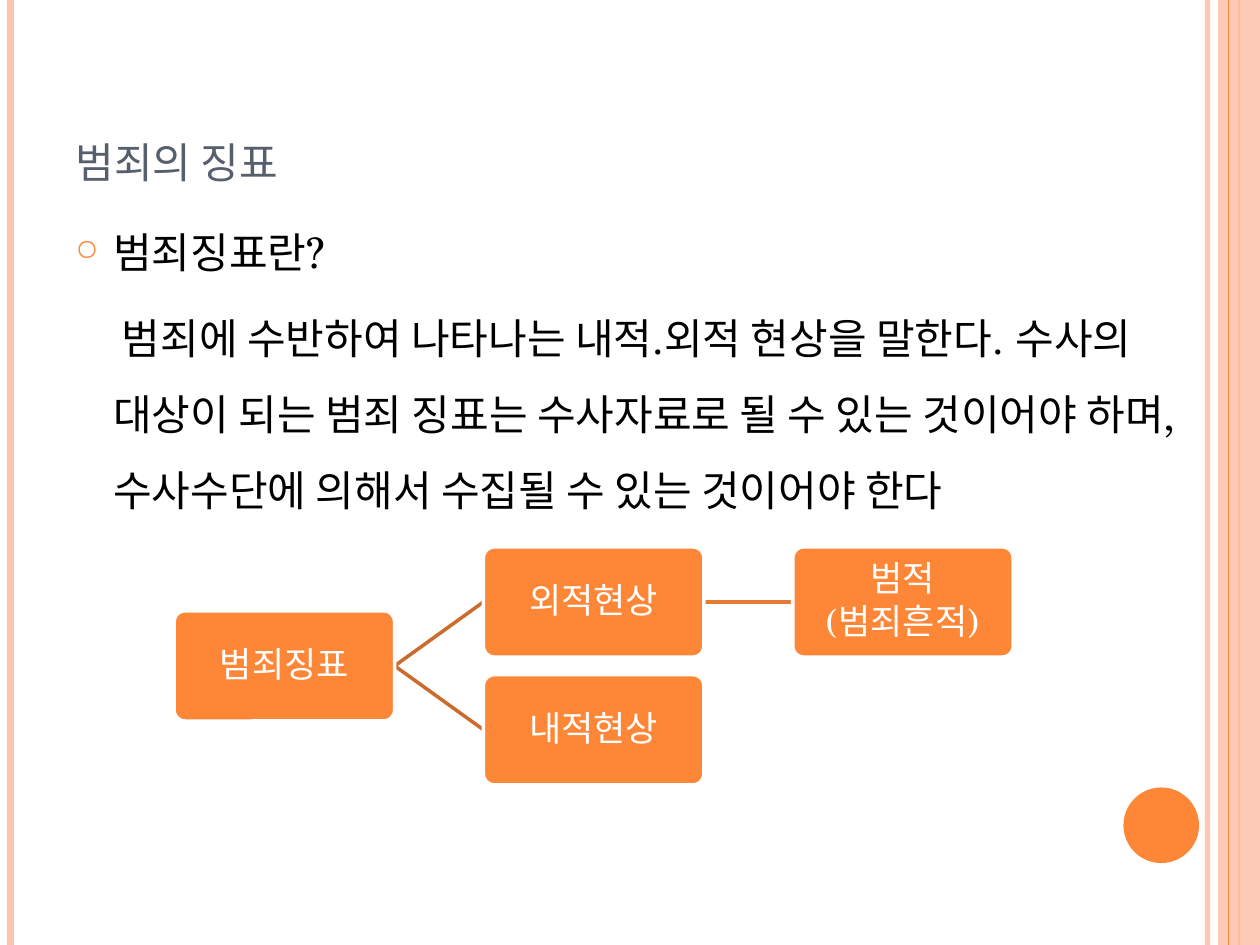
from lxml import etree
from pptx import Presentation
from pptx.dml.color import RGBColor
from pptx.enum import shapes, text
from pptx.oxml import ns
from pptx.util import Pt

FONT = "TeX Gyre Schola"
COLORS = {
    "orange": "FE8637",
    "peach": "FEC3AE",
    "branch": "CB6B2C",
    "link": "E77A32",
    "title": "575F6D",
    "body": "000000",
    "white": "FFFFFF",
}
BOX_WIDTH, BOX_HEIGHT = 126, 63
COLUMN_LEFT, COLUMN_STEP = 99.5, 176.75
ROW_TOP, ROW_STEP = 312.5, 36.5


def color(name):
    return RGBColor.from_string(COLORS[name])


def add_child(parent, tag, **attributes):
    return etree.SubElement(parent, ns.qn(tag), **attributes)


def add_line(slide, start, end, color_name, width):
    line = slide.shapes.add_connector(
        shapes.MSO_CONNECTOR.STRAIGHT, *(Pt(value) for value in (*start, *end)))
    line.line.color.rgb = color(color_name)
    line.line.width = Pt(width)
    add_child(line._element.spPr, "a:effectLst")
    return line


def add_filled(slide, kind, left, top, width, height, color_name):
    shape = slide.shapes.add_shape(kind, Pt(left), Pt(top), Pt(width), Pt(height))
    shape.shadow.inherit = False
    shape.fill.solid()
    shape.fill.fore_color.rgb = color(color_name)
    shape.line.fill.background()
    return shape


def set_alpha(fill_parent, percent):
    rgb = fill_parent.find(".//" + ns.qn("a:srgbClr"))
    add_child(rgb, "a:alpha", val=str(percent * 1000))


def format_text(paragraph, size, color_name):
    for run in paragraph.runs:
        run.font.name = FONT
        run.font.size = Pt(size)
        run.font.color.rgb = color(color_name)


def add_text(slide, left, top, width, height, content):
    box = slide.shapes.add_textbox(Pt(left), Pt(top), Pt(width), Pt(height))
    box.text_frame.word_wrap = True
    box.text_frame.text = content
    return box.text_frame


def set_indent(paragraph, left, first):
    properties = paragraph._p.get_or_add_pPr()
    properties.set("marL", str(Pt(left)))
    properties.set("indent", str(Pt(first)))
    return properties


def add_bullet(properties):
    bullet_color = add_child(properties, "a:buClr")
    add_child(bullet_color, "a:srgbClr", val=COLORS["orange"])
    add_child(properties, "a:buSzPct", val="70000")
    add_child(properties, "a:buChar", char="○")


def add_frame(slide):
    """Vertical stripes at both edges and the disc."""
    edge = add_line(slide, (690, 0), (690, 540), "peach", 3)
    set_alpha(edge._element.spPr, 93)
    add_line(slide, (6, 0), (6, 540), "peach", 4.5)
    add_line(slide, (708, 0), (708, 540), "orange", 1.5)
    band = add_filled(slide, shapes.MSO_SHAPE.RECTANGLE, 696, 0, 24, 540, "peach")
    set_alpha(band._element.spPr, 87)
    add_line(slide, (702, 0), (702, 540), "orange", 0.75)
    add_filled(slide, shapes.MSO_SHAPE.OVAL, 642, 450, 43.2, 43.2, "orange")


def add_title(slide):
    frame = add_text(slide, 36, 21.6, 588, 90, "범죄의 징표")
    frame.vertical_anchor = text.MSO_ANCHOR.BOTTOM
    format_text(frame.paragraphs[0], 30, "title")
    frame.paragraphs[0].runs[0].font._element.set("cap", "small")


def add_body(slide):
    frame = add_text(slide, 36, 126, 653, 384, "범죄징표란?")
    question = frame.paragraphs[0]
    answer = frame.add_paragraph()
    answer.text = ("범죄에 수반하여 나타나는 내적.외적 현상을 말한다. 수사의 대상이 되는 "
                   "범죄 징표는 수사자료로 될 수 있는 것이어야 하며, 수사수단에 의해서 "
                   "수집될 수 있는 것이어야 한다")
    answer.line_spacing = 1.5
    for paragraph in (question, answer):
        paragraph.space_before = Pt(6)
        format_text(paragraph, 24, "body")
    add_bullet(set_indent(question, 21.6, -21.6))
    set_indent(answer, 21.6, 5)


def add_node(slide, left, top, label):
    shape = add_filled(slide, shapes.MSO_SHAPE.ROUNDED_RECTANGLE,
                       left, top, BOX_WIDTH, BOX_HEIGHT, "orange")
    shape.adjustments[0] = 0.1
    shape.line.color.rgb = color("white")
    shape.line.width = Pt(2)
    frame = shape.text_frame
    frame.word_wrap = True
    frame.vertical_anchor = text.MSO_ANCHOR.MIDDLE
    frame.margin_left = frame.margin_right = Pt(1)
    frame.margin_top = frame.margin_bottom = Pt(1)
    frame.text = label
    for paragraph in frame.paragraphs:
        paragraph.alignment = text.PP_ALIGN.CENTER
        paragraph.line_spacing = 0.9
        paragraph.space_after = Pt(3)
        format_text(paragraph, 20, "white")


def add_tree(slide):
    # Each node is a column, a row and a label
    nodes = {
        "root": (0, 1, "범죄징표"),
        "outer": (1, 0, "외적현상"),
        "trace": (2, 0, "범적\n(범죄흔적)"),
        "inner": (1, 2, "내적현상"),
    }
    links = [("root", "outer", "branch"), ("outer", "trace", "link"),
             ("root", "inner", "branch")]
    corners = {name: (COLUMN_LEFT + column * COLUMN_STEP, ROW_TOP + row * ROW_STEP)
               for name, (column, row, _) in nodes.items()}
    for parent, child, color_name in links:
        (left, top), (child_left, child_top) = corners[parent], corners[child]
        add_line(slide, (left + BOX_WIDTH, top + BOX_HEIGHT / 2),
                 (child_left, child_top + BOX_HEIGHT / 2), color_name, 2)
    for name, (_, _, label) in nodes.items():
        add_node(slide, *corners[name], label)


def main():
    presentation = Presentation()
    presentation.slide_width, presentation.slide_height = Pt(720), Pt(540)
    slide = presentation.slides.add_slide(presentation.slide_layouts[6])
    add_frame(slide)
    add_title(slide)
    add_body(slide)
    add_tree(slide)
    presentation.save("out.pptx")


if __name__ == "__main__":
    main()
